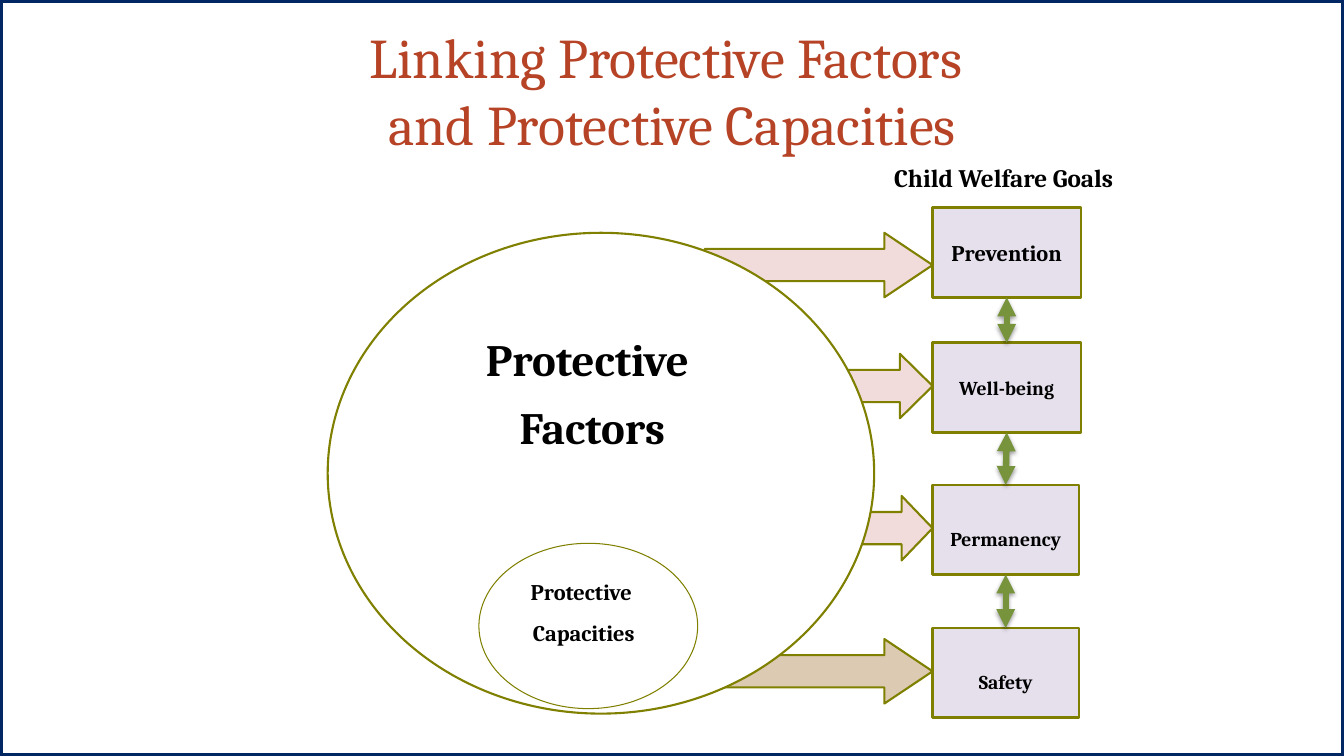
"""Build the slide that links protective factors to child welfare goals."""
from lxml import etree
from pptx import Presentation
from pptx.dml.color import RGBColor
from pptx.enum.shapes import MSO_CONNECTOR, MSO_SHAPE
from pptx.enum.text import MSO_ANCHOR, MSO_AUTO_SIZE, PP_ALIGN
from pptx.oxml.ns import qn
from pptx.util import Inches, Pt

RECT, OVAL, ARROW = MSO_SHAPE.RECTANGLE, MSO_SHAPE.OVAL, MSO_SHAPE.RIGHT_ARROW
STRAIGHT = MSO_CONNECTOR.STRAIGHT
TOP, MIDDLE = MSO_ANCHOR.TOP, MSO_ANCHOR.MIDDLE
CENTER = PP_ALIGN.CENTER
NO_AUTOFIT = MSO_AUTO_SIZE.NONE

THEME = {
    "font": "Cambria",
    "frame": "002663", "title": "B64326", "text": "000000", "white": "FFFFFF",
    "outline": "808000", "goal": "E6E0EC", "pink": "F2DCDB", "tan": "DCCBB2",
    "link": "77933C",
    "title_size": 40, "factors_size": 32, "heading_size": 18,
    "label_size": 16, "goal_size": 14,
}


def add_box(kind, at, fill=None, line=None, width=1.5):
    sp = s.shapes.add_shape(kind, *[Inches(v) for v in at])
    sp.shadow.inherit = False
    if fill:
        sp.fill.solid()
        sp.fill.fore_color.rgb = RGBColor.from_string(THEME[fill])
    else:
        sp.fill.background()
    if line:
        sp.line.color.rgb = RGBColor.from_string(THEME[line])
        sp.line.width = Pt(width)
    else:
        sp.line.fill.background()
    return sp


def write(sp, text, size, color="text", bold=True, after=10, anchor=TOP):
    tf = sp.text_frame
    tf.word_wrap = True
    tf.auto_size = NO_AUTOFIT
    tf.vertical_anchor = anchor
    tf.text = text
    for p in tf.paragraphs:
        p.alignment = CENTER
        p.space_before = Pt(0)
        p.space_after = Pt(after)
        p.line_spacing = 1.0
        for r in p.runs:
            r.font.name = THEME["font"]
            r.font.size = Pt(THEME[size])
            r.font.bold = bold
            r.font.color.rgb = RGBColor.from_string(THEME[color])


prs = Presentation()
prs.slide_width, prs.slide_height = Inches(13.33), Inches(7.5)
s = prs.slides.add_slide(prs.slide_layouts[5])

title = s.shapes.title
title.left, title.top = Inches(0), Inches(0.17)
title.width, title.height = Inches(13.33), Inches(1.25)
write(title, "Linking Protective Factors \vand Protective Capacities",
      "title_size", color="title", bold=False, after=0)

add_box(RECT, (0, 0, 13.33, 7.5), line="frame", width=4.5)

goal_left = 9.25
for top, width, head, fill in [
    (2.31, 2.26, 0.747, "pink"),
    (3.51, 1.58, 0.507, "pink"),
    (4.92, 1.5, 0.48, "pink"),
    (6.34, 2.33, 0.747, "tan"),
]:
    arrow = add_box(ARROW, (goal_left - width, top, width, 0.64), fill, "outline")
    arrow.adjustments[0] = 0.5
    arrow.adjustments[1] = head

add_box(OVAL, (3.25, 2.31, 5.42, 4.77), "white", "outline")
factors = s.shapes.add_textbox(Inches(4.5), Inches(3.24), Inches(2.75), Inches(0.82))
write(factors, "Protective \nFactors", "factors_size")

add_box(OVAL, (4.75, 5.39, 2.17, 1.64), line="outline", width=0.75)
capacities = add_box(RECT, (5.08, 5.69, 1.42, 0.79), "white")
write(capacities, "Protective \nCapacities", "label_size")

heading = add_box(RECT, (8.33, 1.56, 3.25, 0.62), "white")
write(heading, "Child Welfare Goals", "heading_size")

goals = []
for name, top, width, size, anchor, inset in [
    ("Prevention", 2.06, 1.47, "label_size", MIDDLE, 0.05),
    ("Well-being", 3.4, 1.47, "goal_size", MIDDLE, 0.05),
    ("Permanency", 4.81, 1.45, "goal_size", TOP, 0.42),
    ("Safety", 6.23, 1.45, "goal_size", TOP, 0.42),
]:
    goal = add_box(RECT, (goal_left, top, width, 0.89), "goal", "outline", 1.75)
    write(goal, name, size, anchor=anchor)
    goal.text_frame.margin_top = Inches(inset)
    goals.append(goal)

for upper, lower in zip(goals, goals[1:]):
    link = s.shapes.add_connector(STRAIGHT, 0, 0, 0, 0)
    link.begin_connect(upper, 2)
    link.end_connect(lower, 0)
    link.line.color.rgb = RGBColor.from_string(THEME["link"])
    link.line.width = Pt(4.5)
    ln = link.line._get_or_add_ln()
    for end in ("a:headEnd", "a:tailEnd"):
        etree.SubElement(ln, qn(end), type="triangle")
    effects = etree.SubElement(link._element.spPr, qn("a:effectLst"))
    shadow = etree.SubElement(effects, qn("a:outerShdw"), blurRad=str(Pt(3.1)),
                              dist=str(Pt(1.6)), dir="5400000", rotWithShape="0")
    tint = etree.SubElement(shadow, qn("a:srgbClr"), val=THEME["text"])
    etree.SubElement(tint, qn("a:alpha"), val="38000")

prs.save("out.pptx")
